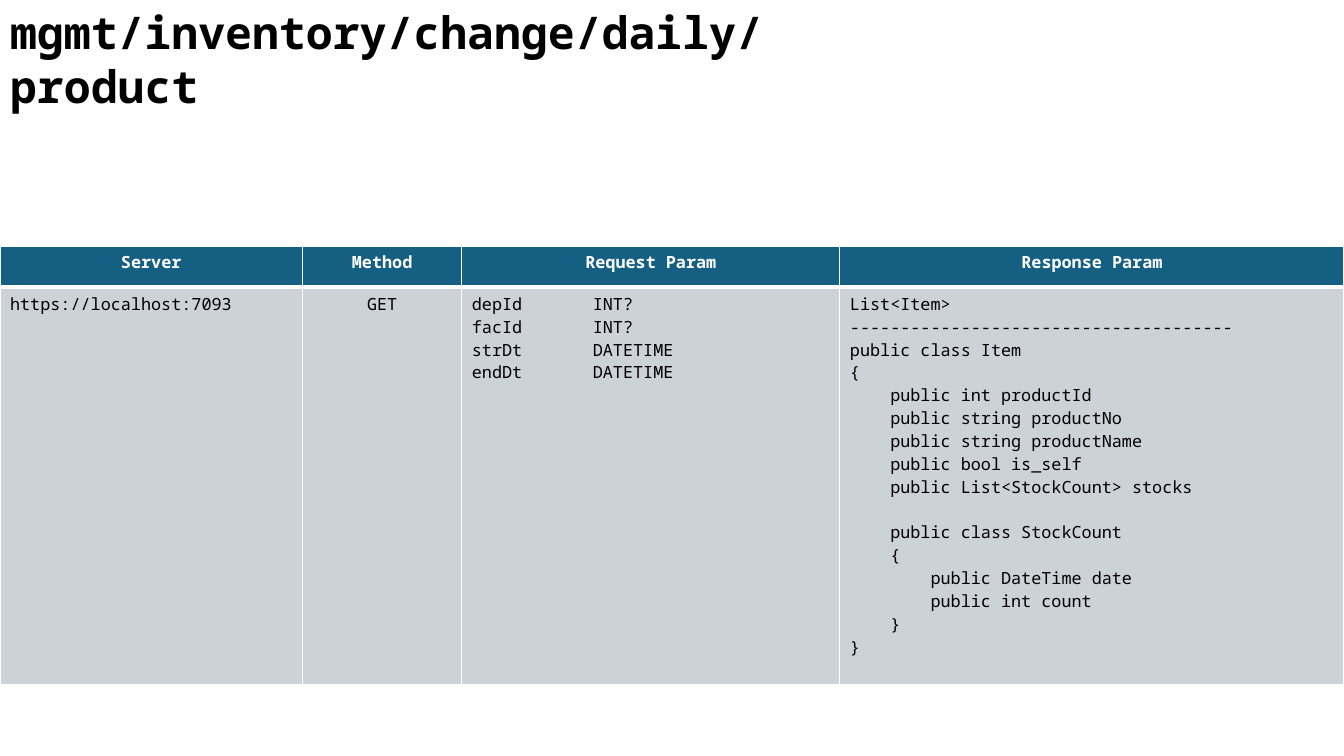
from lxml import etree
from pptx import Presentation
from pptx import util as u
from pptx.dml.color import RGBColor
from pptx.enum import text
from pptx.oxml import ns

FONT = "Noto Sans Mono"
WHITE, BLACK, TEAL, GRAY = "FFFFFF", "000000", "156082", "CCD2D8"
LEFT, CENTER = text.PP_ALIGN.LEFT, text.PP_ALIGN.CENTER
COLUMNS = [("Server", 3), ("Method", 1.58), ("Request Param", 3.75), ("Response Param", 5)]
REQUEST = """depId\tINT?
facId\tINT?
strDt\tDATETIME
endDt\tDATETIME"""
RESPONSE = """List<Item>
--------------------------------------
public class Item
{
    public int productId
    public string productNo
    public string productName
    public bool is_self
    public List<StockCount> stocks

    public class StockCount
    {
        public DateTime date
        public int count
    }
}"""


def color(value):
    return RGBColor.from_string(value)


def sub(parent, tag, **attrs):
    return etree.SubElement(parent, ns.qn(tag), attrs)


def write(tf, content, size=12, ink=BLACK, bold=False, align=LEFT, tab=None):
    p, gap = None, 0
    for line in content.split("\n"):
        if not line:
            gap += 16.3
            continue
        p = tf.paragraphs[0] if p is None else tf.add_paragraph()
        if tab:
            stops = sub(p._p.get_or_add_pPr(), "a:tabLst")
            sub(stops, "a:tab", pos=str(u.Inches(tab)), algn="l")
        p.alignment = align
        p.space_before = u.Pt(gap)
        gap = 0
        r = p.add_run()
        r.text = line
        r.font.name = FONT
        r.font.size = u.Pt(size)
        r.font.bold = bold
        r.font.color.rgb = color(ink)


def set_borders(cell, **widths):
    tcPr = cell._tc.get_or_add_tcPr()
    for side in "LRTB":
        ln = sub(tcPr, f"a:ln{side}", w=str(u.Pt(widths.get(side, 1))))
        sub(sub(ln, "a:solidFill"), "a:srgbClr", val=WHITE)


def fill_cell(cell, content, fill, borders, **fmt):
    set_borders(cell, **borders)
    cell.fill.solid()
    cell.fill.fore_color.rgb = color(fill)
    write(cell.text_frame, content, **fmt)


def add_title(s, content):
    sp = s.shapes.title
    sp.left, sp.top = u.Inches(0), u.Inches(0)
    sp.width, sp.height = u.Inches(8.92), u.Inches(1.17)
    tf = sp.text_frame
    tf.word_wrap = True
    tf.auto_size = text.MSO_AUTO_SIZE.SHAPE_TO_FIT_TEXT
    tf.vertical_anchor = text.MSO_ANCHOR.TOP
    write(tf, content, size=32, bold=True)


def add_api_table(s, values):
    heights = [0.41, 3.94]
    table = s.shapes.add_table(
        2, len(COLUMNS), u.Inches(0), u.Inches(2.44), u.Inches(13.33), u.Inches(sum(heights))
    ).table
    for row, height in zip(table.rows, heights):
        row.height = u.Inches(height)
    for i, ((name, width), (content, fmt)) in enumerate(zip(COLUMNS, values)):
        table.columns[i].width = u.Inches(width)
        fill_cell(table.cell(0, i), name, TEAL, {"B": 3}, ink=WHITE, bold=True, align=CENTER)
        fill_cell(table.cell(1, i), content, GRAY, {"T": 3}, **fmt)


def main():
    prs = Presentation()
    prs.slide_width, prs.slide_height = u.Inches(13.33), u.Inches(7.5)
    s = prs.slides.add_slide(prs.slide_layouts[5])
    add_title(s, "mgmt/inventory/change/daily/product")
    add_api_table(s, [
        ("https://localhost:7093", {}),
        ("GET", {"align": CENTER}),
        (REQUEST, {"tab": 1.2}),
        (RESPONSE, {}),
    ])
    prs.save("out.pptx")


if __name__ == "__main__":
    main()
